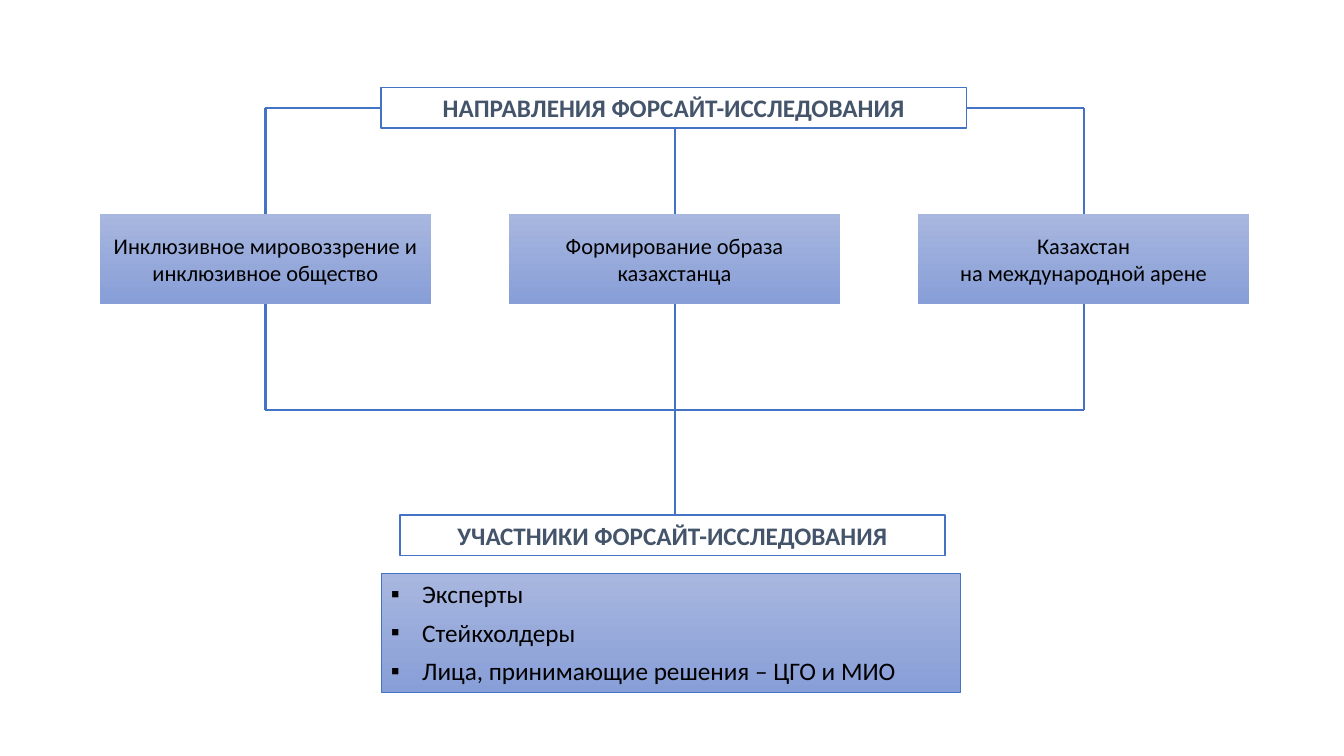
from lxml import etree
from pptx import Presentation
from pptx import util as u
from pptx.dml import color
from pptx.enum import shapes, text
from pptx.oxml import ns

FONT = "Calibri"
BLUE, SLATE, BLACK, WHITE = "4472C4", "44546A", "000000", "FFFFFF"
GRADIENT = ("A8B7DF", "889ED7")

# Boxes in centimetres: left, top, width, height
DIRECTIONS_HEADING = (9.6, 2.21, 14.76, 1.02)
DIRECTIONS_ROW = (2.51, 5.39, 28.98, 2.26)
PARTICIPANTS_HEADING = (10.08, 12.98, 13.74, 1.02)
PARTICIPANTS_LIST = (9.6, 14.45, 14.6, 3)
CARD_WIDTH = 8.36
JOIN_Y = 10.34

DIRECTIONS = [
    "Инклюзивное мировоззрение и инклюзивное общество",
    "Формирование образа казахстанца",
    "Казахстан\nна международной арене",
]
PARTICIPANTS = ["Эксперты", "Стейкхолдеры", "Лица, принимающие решения – ЦГО и МИО"]


def rgb(value):
    return color.RGBColor.from_string(value)


def add_box(slide, box, content, size, font_color, line_width=0, bold=False):
    """Add a rectangle with centred text; a zero line width means no outline."""
    shape = slide.shapes.add_shape(shapes.MSO_SHAPE.RECTANGLE, *map(u.Cm, box))
    shape.shadow.inherit = False
    if line_width:
        shape.line.color.rgb = rgb(BLUE)
        shape.line.width = u.Pt(line_width)
    else:
        shape.line.fill.background()
    shape.text_frame.word_wrap = True
    shape.text_frame.text = content
    for paragraph in shape.text_frame.paragraphs:
        paragraph.alignment = text.PP_ALIGN.CENTER
        for run in paragraph.runs:
            run.font.name = FONT
            run.font.size = u.Pt(size)
            run.font.bold = bold
            run.font.color.rgb = rgb(font_color)
    return shape


def fill_gradient(shape):
    shape.fill.gradient()
    shape.fill.gradient_angle = 270
    for stop, value in zip(shape.fill.gradient_stops, GRADIENT):
        stop.color.rgb = rgb(value)


def add_line(slide, x1, y1, x2, y2):
    line = slide.shapes.add_connector(
        shapes.MSO_CONNECTOR.STRAIGHT, *map(u.Cm, (x1, y1, x2, y2)))
    line.line.color.rgb = rgb(BLUE)
    line.line.width = u.Pt(1.5)
    etree.SubElement(line._element.spPr, ns.qn("a:effectLst"))


def add_heading(slide, box, content):
    shape = add_box(slide, box, content, 18, SLATE, line_width=1, bold=True)
    shape.fill.solid()
    shape.fill.fore_color.rgb = rgb(WHITE)
    shape.text_frame.vertical_anchor = text.MSO_ANCHOR.TOP


def add_direction_cards(slide, box):
    """Spread the cards evenly over the box and return their centres."""
    left, top, width, height = box
    pitch = (width - CARD_WIDTH) / (len(DIRECTIONS) - 1)
    centres = []
    for index, direction in enumerate(DIRECTIONS):
        card_left = left + index * pitch
        card = add_box(slide, (card_left, top, CARD_WIDTH, height), direction, 16, BLACK)
        card.text_frame.vertical_anchor = text.MSO_ANCHOR.MIDDLE
        fill_gradient(card)
        centres.append(card_left + CARD_WIDTH / 2)
    return centres


def add_participants(slide, box):
    shape = add_box(slide, box, "\n".join(PARTICIPANTS), 18, BLACK, line_width=0.5)
    fill_gradient(shape)
    shape.text_frame.vertical_anchor = text.MSO_ANCHOR.TOP
    for paragraph in shape.text_frame.paragraphs:
        paragraph.alignment = text.PP_ALIGN.JUSTIFY
        paragraph.space_after = u.Pt(6)
        properties = paragraph._p.get_or_add_pPr()
        properties.set("marL", str(u.Cm(0.79)))
        properties.set("indent", str(u.Cm(-0.79)))
        etree.SubElement(properties, ns.qn("a:buFont"), typeface="Arial")
        etree.SubElement(properties, ns.qn("a:buChar"), char="▪")


def add_tree_lines(slide, heading, row, centres, join_y, end_y):
    """Link the heading to the cards, and the cards to the participants."""
    left, top, width, height = heading
    row_top, row_bottom = row[1], row[1] + row[3]
    first, middle, last = centres
    side_y = top + height / 2
    # From the heading down to the cards
    add_line(slide, first, side_y, left, side_y)
    add_line(slide, left + width, side_y, last, side_y)
    for x, start_y in zip(centres, (side_y, top + height, side_y)):
        add_line(slide, x, start_y, x, row_top)
        add_line(slide, x, row_bottom, x, join_y)
    # From the cards to the participants
    add_line(slide, first, join_y, last, join_y)
    add_line(slide, middle, join_y, middle, end_y)


def main():
    presentation = Presentation()
    presentation.slide_width, presentation.slide_height = u.Cm(33.87), u.Cm(19.05)
    slide = presentation.slides.add_slide(presentation.slide_layouts[6])
    add_heading(slide, PARTICIPANTS_HEADING, "УЧАСТНИКИ ФОРСАЙТ-ИССЛЕДОВАНИЯ")
    add_participants(slide, PARTICIPANTS_LIST)
    add_heading(slide, DIRECTIONS_HEADING, "НАПРАВЛЕНИЯ ФОРСАЙТ-ИССЛЕДОВАНИЯ")
    centres = add_direction_cards(slide, DIRECTIONS_ROW)
    add_tree_lines(slide, DIRECTIONS_HEADING, DIRECTIONS_ROW, centres,
                   JOIN_Y, PARTICIPANTS_HEADING[1])
    presentation.save("out.pptx")


if __name__ == "__main__":
    main()
